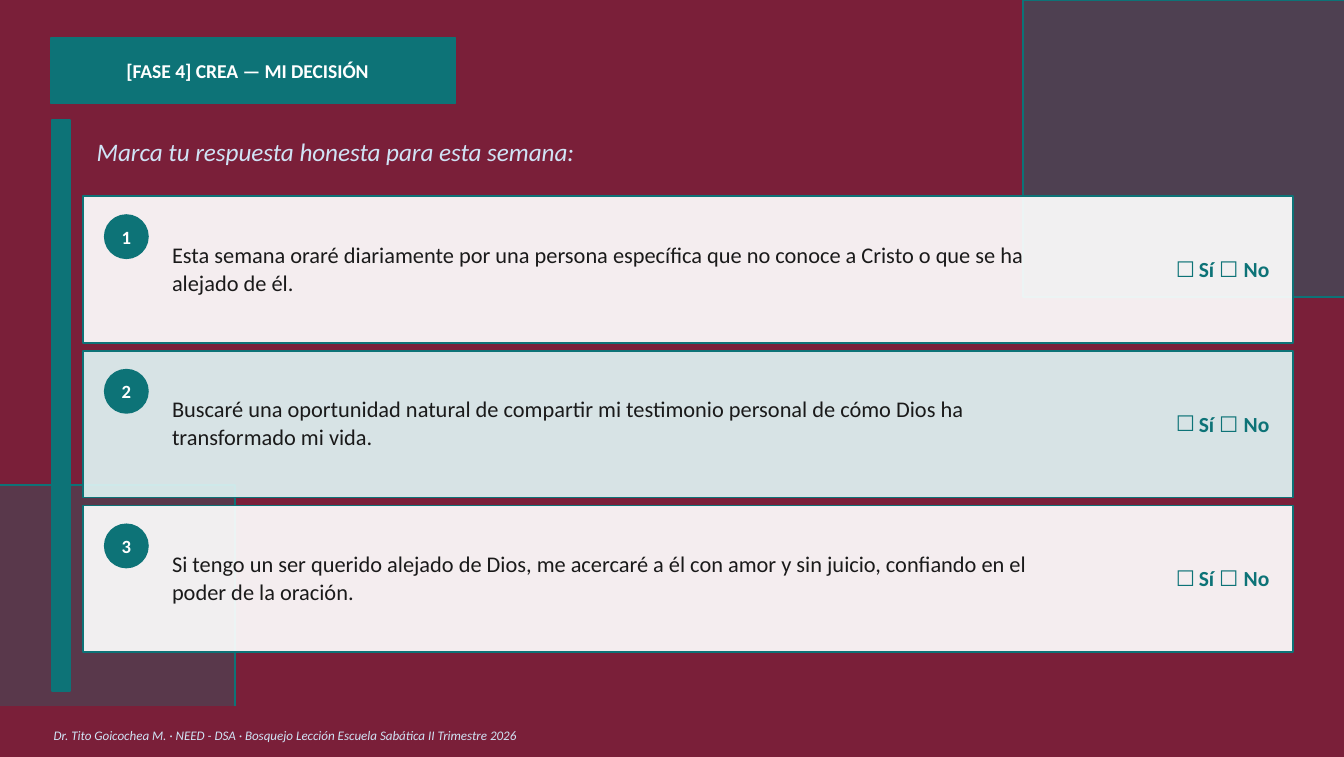
from lxml import etree
from pptx import Presentation
from pptx.dml.color import RGBColor
from pptx.enum import shapes as sh, text as tx
from pptx.oxml.ns import qn
from pptx.util import Inches, Pt

WINE = RGBColor(0x7A, 0x1F, 0x39)
TEAL = RGBColor(0x0D, 0x73, 0x77)
MINT = RGBColor(0xDF, 0xF4, 0xF4)
WHITE = RGBColor(0xFF, 0xFF, 0xFF)
PALE = RGBColor(0xD0, 0xE3, 0xF5)
INK = RGBColor(0x1A, 0x1A, 0x1A)

RECT = sh.MSO_SHAPE.RECTANGLE
OVAL = sh.MSO_SHAPE.OVAL
LEFT = tx.PP_ALIGN.LEFT
CENTER = tx.PP_ALIGN.CENTER

GOALS = [
    ("Esta semana oraré diariamente por una persona específica "
     "que no conoce a Cristo o que se ha alejado de él.", WHITE),
    ("Buscaré una oportunidad natural de compartir mi testimonio "
     "personal de cómo Dios ha transformado mi vida.", MINT),
    ("Si tengo un ser querido alejado de Dios, me acercaré a él con amor "
     "y sin juicio, confiando en el poder de la oración.", WHITE),
]


def paint(shape, fill, line, alpha=100):
    """Set fill, outline and opacity (percent), with no shadow."""
    shape.shadow.inherit = False
    shape.fill.solid()
    shape.fill.fore_color.rgb = fill
    shape.line.color.rgb = line
    shape.line.width = Pt(1)
    if alpha < 100:
        tint = shape.fill._xPr.find(qn("a:solidFill"))[0]
        etree.SubElement(tint, qn("a:alpha")).set("val", str(alpha * 1000))


def add_block(slide, kind, x, y, w, h, fill, line=TEAL, alpha=100):
    block = slide.shapes.add_shape(kind, Inches(x), Inches(y), Inches(w), Inches(h))
    paint(block, fill, line, alpha)
    return block


def add_panel(slide, points, alpha):
    """Draw a translucent panel whose outline stays open at the slide edge."""
    spots = [(Inches(x), Inches(y)) for x, y in points]
    pen = slide.shapes.build_freeform(*spots[0])
    pen.add_line_segments(spots[1:], close=False)
    paint(pen.convert_to_shape(), TEAL, TEAL, alpha)


def write(shape, runs, size, color, bold=False, italic=False,
          align=LEFT, wrap=False, inset=0):
    """Fill a shape with one paragraph of (text, font name) runs."""
    frame = shape.text_frame
    frame.word_wrap = wrap
    frame.vertical_anchor = tx.MSO_ANCHOR.MIDDLE
    frame.margin_left = Inches(inset)
    frame.margin_right = frame.margin_top = frame.margin_bottom = 0
    para = frame.paragraphs[0]
    para.alignment = align
    for words, face in runs:
        run = para.add_run()
        run.text = words
        font = run.font
        font.name, font.size = face, Pt(size)
        font.bold, font.italic = bold, italic
        font.color.rgb = color
    return para


def add_label(slide, x, y, w, h, runs, size, color, **style):
    label = slide.shapes.add_textbox(Inches(x), Inches(y), Inches(w), Inches(h))
    return write(label, runs, size, color, inset=0.01, **style)


def add_choice(slide, x, y):
    """Add the yes / no boxes; the first box is the bullet."""
    para = add_label(slide, x, y, 0.76, 0.22,
                     [("Sí ", "Calibri"), ("☐ ", "Lato"), ("No", "Calibri")],
                     11.5, TEAL, bold=True)
    props = para._p.get_or_add_pPr()
    props.set("marL", str(Inches(0.19)))
    props.set("indent", str(-Inches(0.17)))
    etree.SubElement(props, qn("a:buFont")).set("typeface", "Lato")
    etree.SubElement(props, qn("a:buChar")).set("char", "☐")
    tabs = etree.SubElement(props, qn("a:tabLst"))
    tab = etree.SubElement(tabs, qn("a:tab"))
    tab.set("pos", str(Inches(0.19)))
    tab.set("algn", "l")


def add_card(slide, x, y, w, h, number, goal, fill):
    add_block(slide, RECT, x, y, w, h, fill, alpha=92)
    badge = add_block(slide, OVAL, x + 0.16, y + 0.14, 0.32, 0.32, TEAL)
    write(badge, [(str(number), "Calibri")], 10, WHITE, bold=True, align=CENTER)
    para = add_label(slide, x + 0.65, y + 0.31, 6.75, 0.44,
                     [(goal, "Calibri")], 12, INK, wrap=True)
    para.line_spacing = Pt(15)
    add_choice(slide, x + w - 0.9, y + 0.43)


def add_header(slide, x, y):
    tag = add_block(slide, RECT, x, y, 3.01, 0.49, TEAL)
    write(tag, [("[FASE 4] CREA — MI DECISIÓN", "Calibri")], 10.5, WHITE,
          bold=True, inset=0.56)
    add_label(slide, x + 0.33, y + 0.72, 3.73, 0.26,
              [("Marca tu respuesta honesta para esta semana:", "Calibri")],
              13.5, PALE, italic=True)


def add_footer(slide, x, y, w, h):
    add_block(slide, RECT, x, y, w, h, WINE, WINE)
    add_label(slide, x + 0.39, y + 0.14, 3.77, 0.13,
              [("Dr. Tito Goicochea M. · NEED - DSA · Bosquejo Lección "
                "Escuela Sabática II Trimestre 2026", "Calibri")],
              7, PALE, italic=True)


def main():
    deck = Presentation()
    deck.slide_width, deck.slide_height = Inches(10), Inches(5.63)
    slide = deck.slides.add_slide(deck.slide_layouts[6])
    back = slide.background.fill
    back.solid()
    back.fore_color.rgb = WINE

    add_panel(slide, [(10, 0), (7.61, 0), (7.61, 2.21), (10, 2.21)], 40)
    add_panel(slide, [(0, 3.61), (1.75, 3.61), (1.75, 5.26), (0, 5.26)], 30)
    add_block(slide, RECT, 0.39, 0.89, 0.13, 4.25, TEAL)
    add_header(slide, 0.38, 0.28)
    for i, (goal, fill) in enumerate(GOALS):
        add_card(slide, 0.62, 1.46 + 1.15 * i, 9, 1.09, i + 1, goal, fill)
    add_footer(slide, 0, 5.26, 10, 0.37)
    deck.save("out.pptx")


if __name__ == "__main__":
    main()
